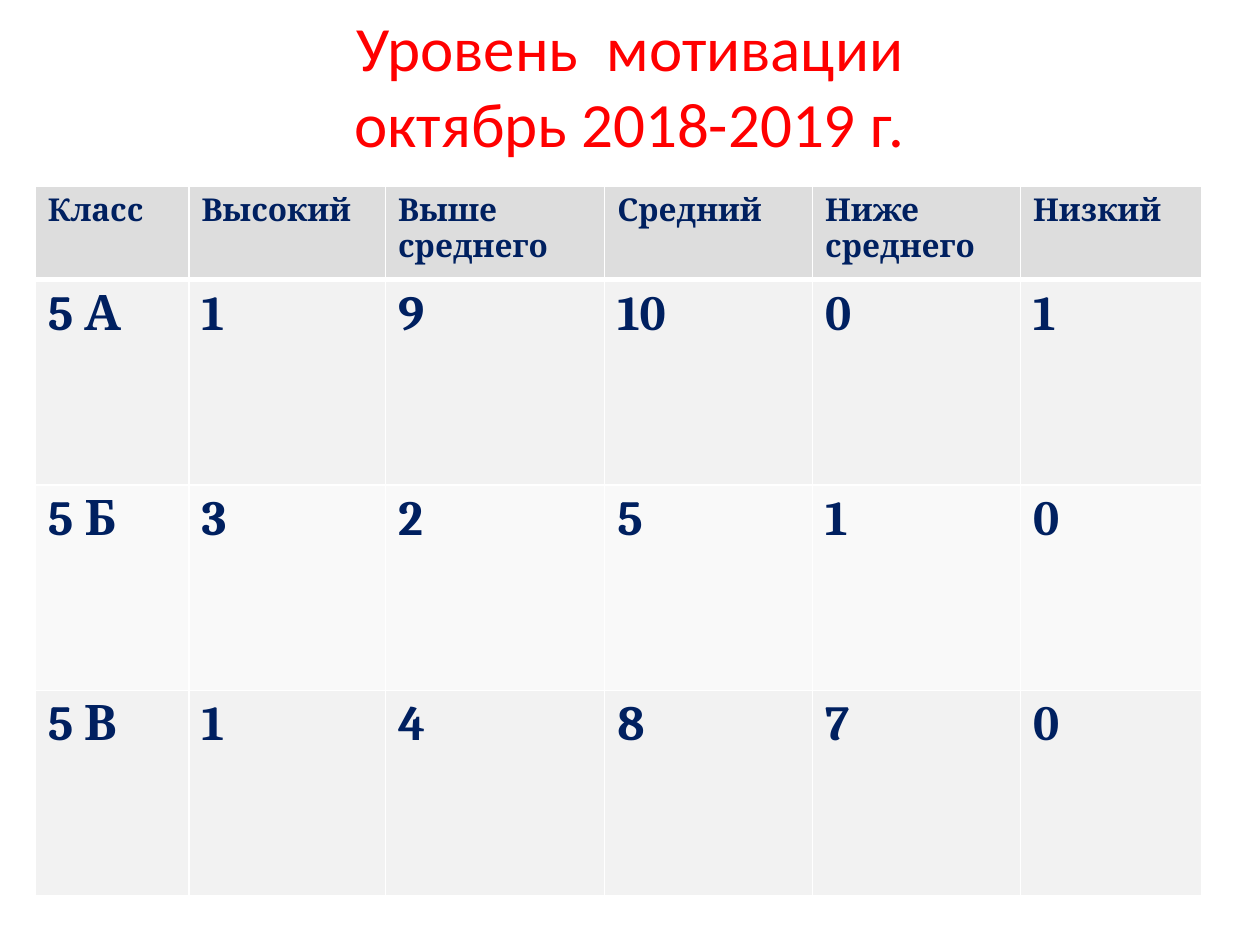
from dataclasses import dataclass

from lxml import etree
from pptx import Presentation
from pptx.dml.color import RGBColor
from pptx.enum import text
from pptx.oxml import ns
from pptx.util import Inches, Pt


@dataclass(frozen=True)
class Theme:
    title_font: str = "Calibri"
    table_font: str = "Cambria"
    title_color: str = "FF0000"
    table_color: str = "002060"
    border_color: str = "FFFFFF"
    header_fill: str = "DDDDDD"
    band_fills: tuple = ("F2F2F2", "F9F9F9")
    title_size: int = 36
    header_size: int = 18
    body_size: int = 28
    thin: int = 1
    thick: int = 3


THEME = Theme()
TITLE = ("Уровень  мотивации", "октябрь 2018-2019 г.")
LEVELS = (
    ("Класс", "Высокий", "Выше среднего", "Средний", "Ниже среднего", "Низкий"),
    ("5 А", "1", "9", "10", "0", "1"),
    ("5 Б", "3", "2", "5", "1", "0"),
    ("5 В", "1", "4", "8", "7", "0"),
)
COL_WIDTHS = (1.22, 1.56, 1.74, 1.65, 1.65, 1.44)
ROW_HEIGHTS = (0.74, 1.63, 1.63, 1.63)


def add_run(p, content, font, size, color, bold=False):
    r = p.add_run()
    r.text = content
    r.font.name = font
    r.font.size = Pt(size)
    r.font.bold = bold
    r.font.color.rgb = RGBColor.from_string(color)


def add_title(s, lines):
    sp = s.shapes.add_textbox(Inches(0.75), Inches(0.16), Inches(8.5), Inches(1.02))
    tf = sp.text_frame
    tf.word_wrap = True
    tf.vertical_anchor = text.MSO_ANCHOR.MIDDLE
    p = tf.paragraphs[0]
    p.alignment = text.PP_ALIGN.CENTER
    for i, line in enumerate(lines):
        if i:
            p.add_line_break()
        add_run(p, line, THEME.title_font, THEME.title_size, THEME.title_color)


def set_borders(cell, top, bottom):
    tc_pr = cell._tc.get_or_add_tcPr()
    widths = {"L": THEME.thin, "R": THEME.thin, "T": top, "B": bottom}
    for i, (side, width) in enumerate(widths.items()):
        ln = etree.Element(ns.qn(f"a:ln{side}"), w=str(Pt(width)))
        fill = etree.SubElement(ln, ns.qn("a:solidFill"))
        etree.SubElement(fill, ns.qn("a:srgbClr"), val=THEME.border_color)
        tc_pr.insert(i, ln)


def fill_cell(cell, content, row):
    header = row == 0
    fill = THEME.header_fill if header else THEME.band_fills[(row - 1) % 2]
    size = THEME.header_size if header else THEME.body_size
    cell.fill.solid()
    cell.fill.fore_color.rgb = RGBColor.from_string(fill)
    p = cell.text_frame.paragraphs[0]
    add_run(p, content, THEME.table_font, size, THEME.table_color, bold=True)
    set_borders(cell,
                top=THEME.thick if row == 1 else THEME.thin,
                bottom=THEME.thick if header else THEME.thin)


def add_levels_table(s, rows):
    table = s.shapes.add_table(
        len(rows), len(COL_WIDTHS), Inches(0.28), Inches(1.48),
        Inches(sum(COL_WIDTHS)), Inches(sum(ROW_HEIGHTS))).table
    for column, width in zip(table.columns, COL_WIDTHS):
        column.width = Inches(width)
    for row, height in zip(table.rows, ROW_HEIGHTS):
        row.height = Inches(height)
    for i, values in enumerate(rows):
        for j, value in enumerate(values):
            fill_cell(table.cell(i, j), value, i)


def main():
    prs = Presentation()
    prs.slide_width, prs.slide_height = Inches(10), Inches(7.5)
    s = prs.slides.add_slide(prs.slide_layouts[6])
    add_title(s, TITLE)
    add_levels_table(s, LEVELS)
    prs.save("out.pptx")


if __name__ == "__main__":
    main()
